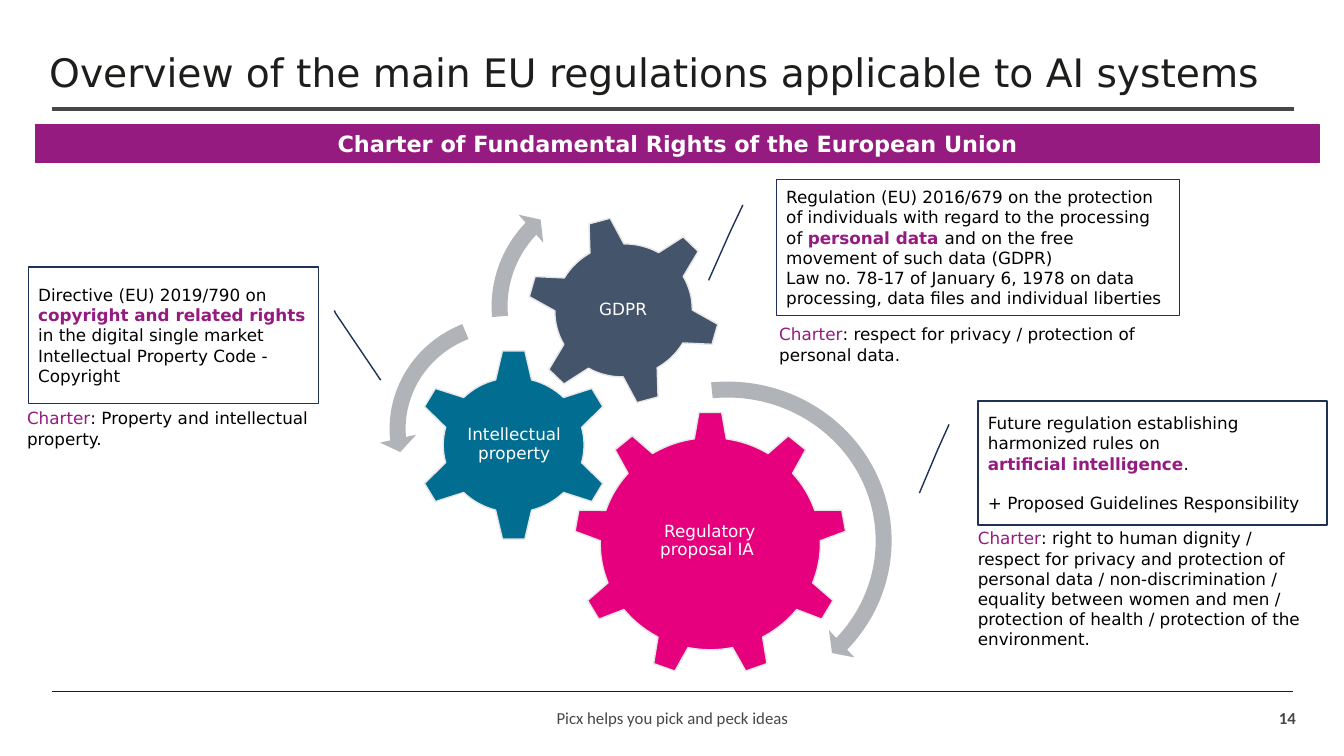
import pptx
import pptx.util
import pptx.dml.color
import pptx.enum.shapes
import pptx.enum.text
import pptx.oxml

Inches = pptx.util.Inches
Pt = pptx.util.Pt
RGBColor = pptx.dml.color.RGBColor
SHAPE = pptx.enum.shapes.MSO_SHAPE
ALIGN = pptx.enum.text.PP_ALIGN

PURPLE = RGBColor(0x95, 0x1B, 0x81)
PINK = RGBColor(0xE6, 0x00, 0x7E)
TEAL = RGBColor(0x00, 0x6D, 0x91)
SLATE = RGBColor(0x44, 0x54, 0x6A)
NAVY = RGBColor(0x1E, 0x32, 0x56)
SILVER = RGBColor(0xB0, 0xB4, 0xB9)
PALE = RGBColor(0xE7, 0xE6, 0xE6)
GREY = RGBColor(0x47, 0x47, 0x47)
INK = RGBColor(0x1D, 0x1D, 0x1B)
BLACK = RGBColor(0, 0, 0)
WHITE = RGBColor(255, 255, 255)

TITLE = "Overview of the main EU regulations applicable to AI systems"
BANNER = "Charter of Fundamental Rights of the European Union"
FOOTER = "Picx helps you pick and peck ideas"
PAGE = "14"

RULES = [(1.08, 12.83, GREY, 3.25), (6.86, 12.82, INK, 0.5)]

GEARS = [
    ("Regulatory proposal IA ", SHAPE.GEAR_9, PINK, 0,
     (5.69, 4.08, 2.71, 2.63), (6.23, 4.69, 1.62, 1.35)),
    ("Intellectual property", SHAPE.GEAR_6, TEAL, 0,
     (4.11, 3.46, 1.97, 1.91), (4.61, 3.94, 0.98, 0.94)),
    ("GDPR", SHAPE.GEAR_6, SLATE, 345,
     (5.22, 2.14, 1.93, 1.88), (5.64, 2.55, 1.08, 1.05)),
]

ARROWS = [
    (SHAPE.CIRCULAR_ARROW, (5.48, 3.68, 3.47, 3.37),
     (0.047, 2.99, 25.231, 158.465, 0.055)),
    (SHAPE.LEFT_CIRCULAR_ARROW, (3.76, 3.03, 2.52, 2.45),
     (0.065, 4.3, 104.891, 148.378, 0.075)),
    (SHAPE.CIRCULAR_ARROW, (4.77, 1.72, 2.71, 2.64),
     (0.06, 3.941, 133.138, 105.082, 0.07)),
]

LEFTWARD = (0.188, -0.083, 0.388, -0.115, 0.742, -0.168)
RIGHTWARD = (0.319, 1.054, 0.341, 1.059, 0.831, 1.214)

LAWS = [
    ((7.7, 1.78, 4, 1.35), LEFTWARD, 0, [
        ["Regulation (EU) 2016/679 on the protection of individuals with "
         "regard to the processing of ", ("personal data ", True),
         "and on the free movement of such data (GDPR)"],
        ["Law no. 78-17 of January 6, 1978 on data processing, data files "
         "and individual liberties"]]),
    ((0.28, 2.65, 2.88, 1.35), RIGHTWARD, 0, [
        ["Directive (EU) 2019/790 on ",
         ("copyright and related rights ", True),
         "in the digital single market"],
        ["Intellectual Property Code - Copyright"]]),
    ((9.7, 3.98, 3.46, 1.23), LEFTWARD, 14, [
        ["Future regulation establishing harmonized rules on ", "\n",
         ("artificial intelligence", True), "."],
        ["+ Proposed Guidelines Responsibility"]]),
]

RIGHTS = [
    ((7.63, 3.22, 4.07, 0.39),
     ": respect for privacy / protection of personal data."),
    ((9.6, 5.66, 3.56, 0.36),
     ": right to human dignity / respect for privacy and protection of "
     "personal data / non-discrimination / equality between women and men / "
     "protection of health / protection of the environment."),
    ((0.17, 4.07, 3.56, 0.36), ": Property and intellectual property."),
]

deck = pptx.Presentation()
deck.slide_width = Inches(13.33)
deck.slide_height = Inches(7.5)
slide = deck.slides.add_slide(deck.slide_layouts[6])
items = slide.shapes


def draw(kind, box, fill=None, line=None, turn=0, adjust=()):
    shape = items.add_shape(kind, *map(Inches, box))
    shape.shadow.inherit = False
    shape.rotation = turn
    for i, value in enumerate(adjust):
        shape.adjustments[i] = value
    if fill is None:
        shape.fill.background()
    else:
        shape.fill.solid()
        shape.fill.fore_color.rgb = fill
    if line is None:
        shape.line.fill.background()
    else:
        shape.line.color.rgb = line
        shape.line.width = Pt(1)
    return shape


def write(text, box=None, shape=None, size=12, color=BLACK, bold=False,
          font="DejaVu Sans", align=ALIGN.LEFT, inset=None, lead=1, gap=0):
    frame = (shape or items.add_textbox(*map(Inches, box))).text_frame
    frame.word_wrap = True
    frame.vertical_anchor = pptx.enum.text.MSO_ANCHOR.MIDDLE
    if inset is not None:
        frame.margin_left = frame.margin_right = Inches(inset)
        frame.margin_top = frame.margin_bottom = Inches(inset)
    paras = [[text]] if isinstance(text, str) else text
    for i, parts in enumerate(paras):
        para = frame.add_paragraph() if i else frame.paragraphs[0]
        para.alignment = align
        para.line_spacing = lead
        if i and gap:
            para.space_before = Pt(gap)
        for part in parts:
            if part == "\n":
                para.add_line_break()
                continue
            accent = isinstance(part, tuple)
            words, heavy = part if accent else (part, bold)
            run = para.add_run()
            run.text = words
            run.font.name = font
            run.font.size = Pt(size)
            run.font.bold = heavy
            run.font.color.rgb = PURPLE if accent else color


for y, end, color, width in RULES:
    rule = items.add_connector(pptx.enum.shapes.MSO_CONNECTOR.STRAIGHT,
                               Inches(0.52), Inches(y), Inches(end), Inches(y))
    rule.line.color.rgb = color
    rule.line.width = Pt(width)
    rule._element.spPr.append(pptx.oxml.parse_xml(
        '<a:effectLst xmlns:a='
        '"http://schemas.openxmlformats.org/drawingml/2006/main"/>'))

write(TITLE, box=(0.39, 0.4, 12.44, 0.69), size=28, color=INK, lead=0.9)
write(FOOTER, box=(4.42, 6.92, 4.5, 0.4), color=GREY, font="Calibri",
      align=ALIGN.CENTER)
write(PAGE, box=(12, 6.92, 0.95, 0.4), color=GREY, font="Calibri",
      bold=True, align=ALIGN.RIGHT)
banner = draw(SHAPE.RECTANGLE, (0.35, 1.24, 12.74, 0.37), PURPLE, PURPLE)
write(BANNER, shape=banner, size=16, color=WHITE, bold=True,
      align=ALIGN.CENTER)

for label, kind, fill, turn, box, inner in GEARS:
    draw(kind, box, fill, PALE, turn=turn)
    write(label, box=inner, color=WHITE, align=ALIGN.CENTER, inset=0.02,
          lead=0.9)

for kind, box, adjust in ARROWS:
    draw(kind, box, SILVER, adjust=adjust)

for box, adjust, gap, text in LAWS:
    law = draw(SHAPE.LINE_CALLOUT_2, box, line=NAVY, adjust=adjust)
    write(text, shape=law, gap=gap)

for box, right in RIGHTS:
    write([[("Charter", False), right]], box=box)

deck.save("out.pptx")
